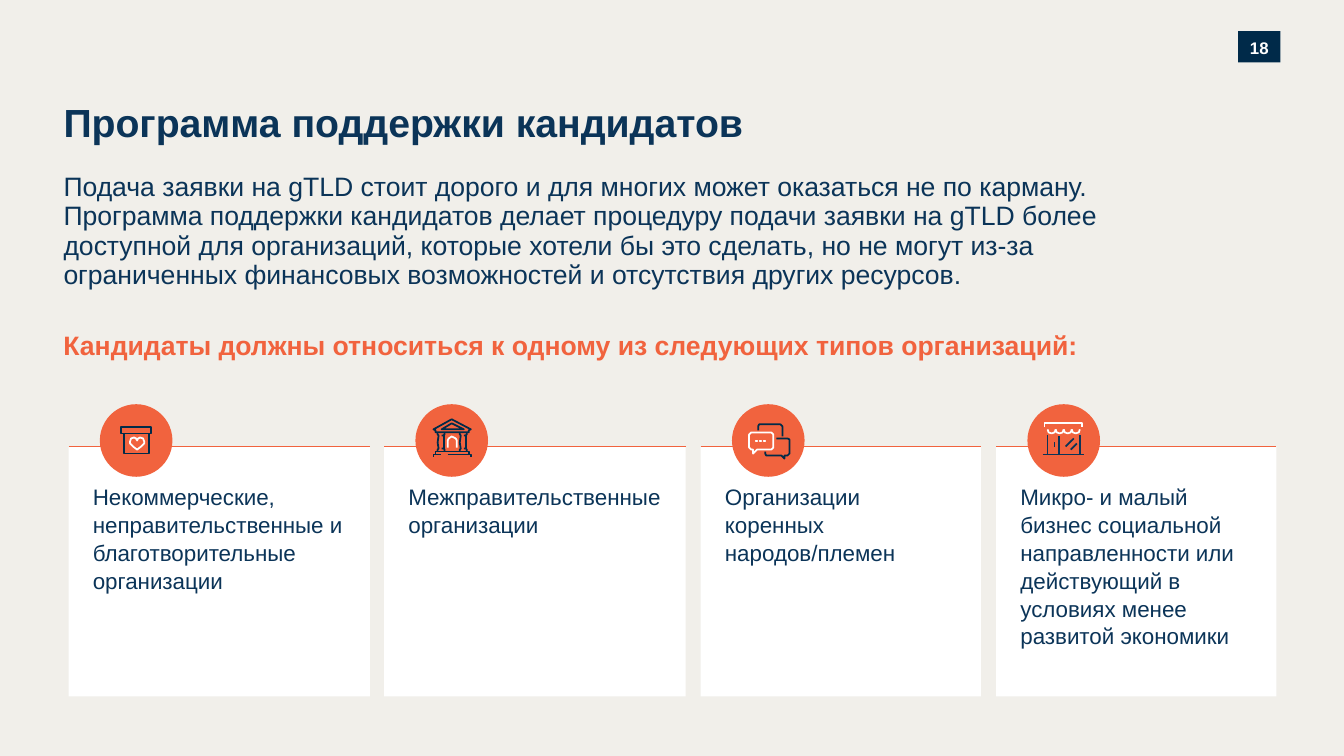
from lxml import etree
from pptx import Presentation
from pptx.dml.color import RGBColor
from pptx.enum.shapes import MSO_CONNECTOR, MSO_SHAPE
from pptx.enum.text import MSO_ANCHOR, MSO_AUTO_SIZE, PP_ALIGN
from pptx.oxml.ns import qn
from pptx.util import Inches, Pt

RECTANGLE, OVAL = MSO_SHAPE.RECTANGLE, MSO_SHAPE.OVAL
STRAIGHT = MSO_CONNECTOR.STRAIGHT
TOP, MIDDLE = MSO_ANCHOR.TOP, MSO_ANCHOR.MIDDLE
LEFT, CENTER = PP_ALIGN.LEFT, PP_ALIGN.CENTER
NO_AUTOFIT = MSO_AUTO_SIZE.NONE

CREAM = RGBColor(0xF1, 0xEF, 0xEA)
WHITE = RGBColor(0xFF, 0xFF, 0xFF)
NAVY = RGBColor(0x0B, 0x34, 0x58)
INK = RGBColor(0x00, 0x2B, 0x49)
DEEP_NAVY = RGBColor(0x00, 0x2A, 0x49)
ORANGE = RGBColor(0xF1, 0x63, 0x3E)

TITLE_FORMAT = {"size": Pt(28), "bold": True}
INTRO_FORMAT = {"size": Pt(19), "bold": False}
SUBHEAD_FORMAT = {"size": Pt(19), "bold": True}
CARD_FORMAT = {"size": Pt(16), "bold": False}
NUMBER_FORMAT = {"size": Pt(12), "bold": True}

INTRO = (
    "Подача заявки на gTLD стоит дорого и для многих может оказаться не по карману. "
    "Программа поддержки кандидатов делает процедуру подачи заявки на gTLD более "
    "доступной для организаций, которые хотели бы это сделать, но не могут из-за "
    "ограниченных финансовых возможностей и отсутствия других ресурсов."
)
SUBHEAD = "Кандидаты должны относиться к одному из следующих типов организаций:"

DONATION_BOX = [
    (INK, True, [(21, 23), (51, 23), (51, 29), (21, 29)]),
    (INK, True, [(24, 29), (49, 29), (49, 49), (24, 49)]),
    (WHITE, True, [(37, 45), (41, 42), (43.5, 39), (44, 37), (43, 34), (40, 33), (38, 34),
                   (37, 36), (36, 34), (34, 33), (31, 34), (30, 37), (30.5, 39), (33, 42)]),
]
COLUMN = [
    [(28, 31), (28, 44)],
    [(26, 31), (28, 31), (29, 30), (29, 28)],
    [(26, 44), (28, 44), (29, 45), (29, 47)],
    [(22, 47), (22, 45), (23, 44), (22, 38), (23, 31), (22, 30), (22, 28)],
]
BANK = [
    (INK, False, [(32, 50), (55, 50), (55, 52)]),
    (INK, False, [(18, 52), (18, 50), (25, 50)]),
    (INK, False, [(20, 50), (20, 47), (53, 47), (53, 50)]),
    (WHITE, False, [(32, 43), (32, 36), (33, 33.5), (36, 32), (39.5, 33.5), (41, 36), (41, 43)]),
    *[(INK, False, [(x + shift, y) for x, y in stroke]) for shift in (0, 22) for stroke in COLUMN],
    (INK, True, [(36, 19), (26, 25), (48, 25)]),
    (INK, True, [(53, 28), (20, 28), (20, 26), (18, 25), (36, 15), (55, 25), (53, 26)]),
]
SPEECH_BUBBLES = [
    (WHITE, True, [(39, 28), (19, 28), (17, 30), (17, 43), (19, 45), (21, 45), (21, 49),
                   (25, 45), (39, 45), (41, 43), (41, 30)]),
    (INK, False, [(33, 47), (33, 49), (34, 51), (49, 51), (52, 54), (52, 51), (55, 51),
                  (57, 49), (57, 35), (55, 34), (44, 34)]),
    (INK, False, [(26, 26), (26, 22), (27, 20), (48, 20), (50, 22), (50, 32)]),
    *[(WHITE, True, [(x, 36), (x + 1, 36), (x + 1, 37), (x, 37)]) for x in (24, 28, 32)],
]
SHOP_LINES = [
    [(20, 31), (20, 50)], [(31, 32), (31, 50)], [(52, 31), (52, 50)], [(27, 38), (27, 42)],
    [(15, 50), (56, 50)], [(46, 34), (38, 42)], [(49, 39), (43, 45)],
]
SHOP = [
    *[(NAVY, False, stroke) for stroke in SHOP_LINES],
    *[(WHITE, False, [(x + 8, 25), (x + 7, 28), (x + 4, 29), (x + 1, 28), (x, 25)])
      for x in range(20, 52, 8)],
    (WHITE, False, [(17, 23), (17, 19), (54, 19), (54, 23)]),
]

CARDS = [
    (0.68, 2.99, ["Некоммерческие,", "неправительственные и благотворительные организации"],
     DONATION_BOX),
    (3.81, 2.99, ["Межправительственные организации"], BANK),
    (6.95, 2.78, ["Организации коренных народов/племен"], SPEECH_BUBBLES),
    (9.88, 2.78, ["Микро- и малый бизнес социальной направленности или действующий "
                  "в условиях менее развитой экономики"], SHOP),
]


def write(shape, lines, font_format, color=NAVY, insets=(0, 0, 0, 0), anchor=TOP,
          align=LEFT, spacing=1.0):
    """Fill a shape with formatted paragraphs."""
    frame = shape.text_frame
    sides = ("margin_left", "margin_top", "margin_right", "margin_bottom")
    settings = {"word_wrap": True, "auto_size": NO_AUTOFIT, "vertical_anchor": anchor,
                **dict(zip(sides, map(Inches, insets)))}
    for name, value in settings.items():
        setattr(frame, name, value)
    frame.text = "\n".join(lines)
    for paragraph in frame.paragraphs:
        paragraph.alignment = align
        paragraph.line_spacing = spacing
        for name, value in {"name": "Arial", **font_format}.items():
            setattr(paragraph.font, name, value)
        paragraph.font.color.rgb = color


def add_plain(shapes, preset, box, fill):
    """Add a preset shape with a flat fill and no outline."""
    shape = shapes.add_shape(preset, *map(Inches, box))
    shape.shadow.inherit = False
    shape.fill.solid()
    shape.fill.fore_color.rgb = fill
    shape.line.fill.background()
    return shape


def add_line(shapes, start, end, color):
    """Add a thin straight line without a shadow."""
    line = shapes.add_connector(STRAIGHT, *map(Inches, (*start, *end)))
    line.line.color.rgb = color
    line.line.width = Pt(1.25)
    etree.SubElement(line._element.spPr, qn("a:effectLst"))


def add_badge(slide, left, top, strokes):
    """Draw a round badge and its icon, given in hundredths of an inch."""
    badge = slide.shapes.add_group_shape().shapes
    add_plain(badge, OVAL, (left, top, 0.72, 0.72), ORANGE)
    for color, closed, points in strokes:
        if len(points) == 2:
            start, end = [(left + x / 100, top + y / 100) for x, y in points]
            add_line(badge, start, end, color)
            continue
        builder = badge.build_freeform(*points[0], scale=Inches(0.01))
        builder.add_line_segments(points[1:], close=closed)
        outline = builder.convert_to_shape(Inches(left), Inches(top))
        outline.shadow.inherit = False
        outline.fill.background()
        outline.line.color.rgb = color
        outline.line.width = Pt(1.25)


def add_card(slide, box, lines, strokes):
    """Place a white card with its top rule, text and badge."""
    left, top, width, _ = box
    card = add_plain(slide.shapes, RECTANGLE, box, WHITE)
    write(card, lines, CARD_FORMAT, insets=(0.24, 0.35, 0.16, 0.2), spacing=1.04)
    add_line(slide.shapes, (left, top), (left + width, top), ORANGE)
    add_badge(slide, left + 0.31, top - 0.42, strokes)


def add_heading(slide, left, top):
    """Place the title, introduction and subheading."""
    title = slide.shapes.title
    title.left, title.top, title.width, title.height = map(Inches, (left, top, 7.34, 0.55))
    write(title, ["Программа поддержки кандидатов"], TITLE_FORMAT)
    intro = slide.shapes.add_textbox(*map(Inches, (left, top + 0.73, 10.28, 1.49)))
    write(intro, [INTRO], INTRO_FORMAT, spacing=Pt(21))
    subhead = slide.shapes.add_textbox(*map(Inches, (left, top + 2.28, 10.37, 0.43)))
    write(subhead, [SUBHEAD], SUBHEAD_FORMAT, ORANGE)


def add_page_number(slide, box):
    """Place the page number tag."""
    tag = add_plain(slide.shapes, RECTANGLE, box, DEEP_NAVY)
    write(tag, ["18"], NUMBER_FORMAT, WHITE, anchor=MIDDLE, align=CENTER, spacing=1.08)


def main():
    """Build and save the slide."""
    deck = Presentation()
    deck.slide_width, deck.slide_height = Inches(13.33), Inches(7.5)
    slide = deck.slides.add_slide(deck.slide_layouts.get_by_name("Title Only"))
    slide.background.fill.solid()
    slide.background.fill.fore_color.rgb = CREAM
    add_page_number(slide, (12.28, 0.31, 0.42, 0.31))
    add_heading(slide, 0.63, 0.98)
    for left, width, lines, strokes in CARDS:
        add_card(slide, (left, 4.43, width, 2.48), lines, strokes)
    deck.save("out.pptx")


if __name__ == "__main__":
    main()
